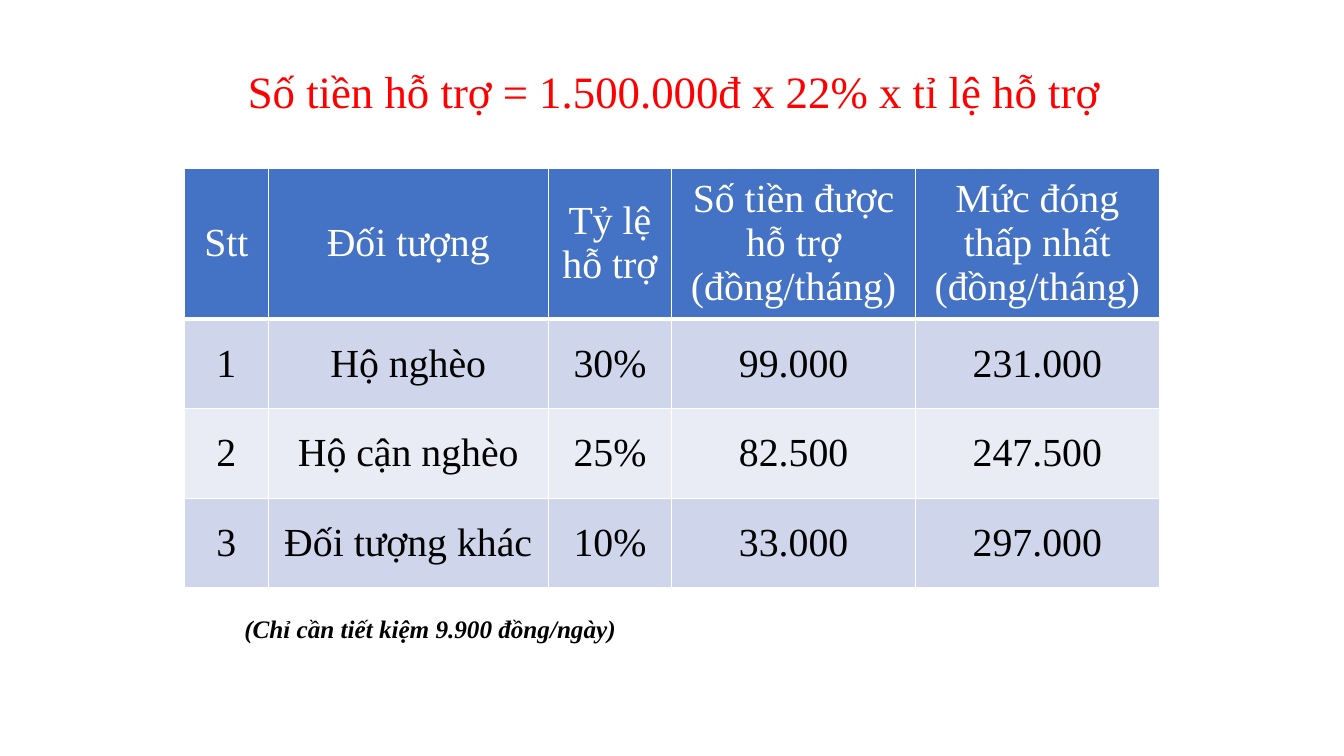
import pptx
import pptx.dml.color
import pptx.enum.text
import pptx.oxml
import pptx.oxml.ns
import pptx.util

RED = pptx.dml.color.RGBColor(0xFF, 0x00, 0x00)
BLACK = pptx.dml.color.RGBColor(0x00, 0x00, 0x00)
WHITE = pptx.dml.color.RGBColor(0xFF, 0xFF, 0xFF)
HEADER_BLUE = pptx.dml.color.RGBColor(0x44, 0x72, 0xC4)
BAND_DARK = pptx.dml.color.RGBColor(0xCF, 0xD5, 0xEA)
BAND_LIGHT = pptx.dml.color.RGBColor(0xE9, 0xEB, 0xF5)

CENTER = pptx.enum.text.PP_ALIGN.CENTER
LEFT = pptx.enum.text.PP_ALIGN.LEFT

SUPPORT_ROWS = [
    ["Stt", "Đối tượng", "Tỷ lệ hỗ trợ", "Số tiền được hỗ trợ (đồng/tháng)",
     "Mức đóng thấp nhất (đồng/tháng)"],
    ["1", "Hộ nghèo", "30%", "99.000", "231.000"],
    ["2", "Hộ cận nghèo", "25%", "82.500", "247.500"],
    ["3", "Đối tượng khác", "10%", "33.000", "297.000"],
]


class SlideBuilder:
    """Places styled elements; lengths are percentages of the slide's size."""

    font_name = "Times New Roman"
    cell_margin = pptx.util.Inches(0.05)
    header_borders = {"lnL": 1, "lnR": 1, "lnT": 1, "lnB": 3}

    def __init__(self, presentation):
        self.width = presentation.slide_width
        self.height = presentation.slide_height
        self.slide = presentation.slides.add_slide(presentation.slide_layouts[6])

    def across(self, percent):
        return round(self.width * percent / 100)

    def down(self, percent):
        return round(self.height * percent / 100)

    def style(self, text_frame, size, color, alignment, bold=False, italic=False):
        for paragraph in text_frame.paragraphs:
            paragraph.alignment = alignment
            for run in paragraph.runs:
                run.font.name = self.font_name
                run.font.size = pptx.util.Pt(size)
                run.font.color.rgb = color
                run.font.bold = bold
                run.font.italic = italic

    def text(self, text, left, top, width, height, size, color, alignment, **emphasis):
        box = self.slide.shapes.add_textbox(
            self.across(left), self.down(top), self.across(width), self.down(height))
        box.text_frame.word_wrap = True
        box.text_frame.auto_size = pptx.enum.text.MSO_AUTO_SIZE.SHAPE_TO_FIT_TEXT
        box.text_frame.text = text
        self.style(box.text_frame, size, color, alignment, **emphasis)

    def borders(self, cell):
        properties = cell._tc.get_or_add_tcPr()
        # Border lines come before the fill in the cell properties
        for position, (tag, width) in enumerate(self.header_borders.items()):
            properties.insert(position, pptx.oxml.parse_xml(
                f'<a:{tag} {pptx.oxml.ns.nsdecls("a")} w="{pptx.util.Pt(width)}">'
                f'<a:solidFill><a:srgbClr val="{WHITE}"/></a:solidFill></a:{tag}>'))

    def cell(self, cell, text, size, color, fill):
        cell.text_frame.text = text
        cell.vertical_anchor = pptx.enum.text.MSO_ANCHOR.MIDDLE
        cell.margin_left = cell.margin_right = self.cell_margin
        cell.margin_top = cell.margin_bottom = self.cell_margin
        cell.fill.solid()
        cell.fill.fore_color.rgb = fill
        self.style(cell.text_frame, size, color, CENTER)

    def table(self, rows, left, top, column_widths, row_heights, size):
        table = self.slide.shapes.add_table(
            len(rows), len(column_widths), self.across(left), self.down(top),
            self.across(sum(column_widths)), self.down(sum(row_heights))).table
        for column, width in zip(table.columns, column_widths):
            column.width = self.across(width)
        for index, (row, height) in enumerate(zip(table.rows, row_heights)):
            row.height = self.down(height)
            band = BAND_DARK if index % 2 else BAND_LIGHT
            color, fill = (BLACK, band) if index else (WHITE, HEADER_BLUE)
            for cell, text in zip(row.cells, rows[index]):
                self.cell(cell, text, size, color, fill)
        for cell in table.rows[0].cells:
            self.borders(cell)


def main():
    presentation = pptx.Presentation()
    presentation.slide_width = pptx.util.Pt(1013.33)
    presentation.slide_height = pptx.util.Pt(570)
    builder = SlideBuilder(presentation)

    # Support table
    builder.table(SUPPORT_ROWS, 13.72, 22.22,
                  column_widths=[6.25, 20.82, 9.2, 18.13, 18.13],
                  row_heights=[19.95] + [11.87] * 3, size=30)

    # Formula heading
    builder.text("Số tiền hỗ trợ = 1.500.000đ x 22% x tỉ lệ hỗ trợ",
                 16.63, 7.83, 67.09, 8.46, 33.8, RED, CENTER)

    # Savings note
    builder.text("(Chỉ cần tiết kiệm 9.900 đồng/ngày)",
                 17.48, 80.56, 67.52, 5.3, 19, BLACK, LEFT, bold=True, italic=True)

    presentation.save("out.pptx")


if __name__ == "__main__":
    main()
